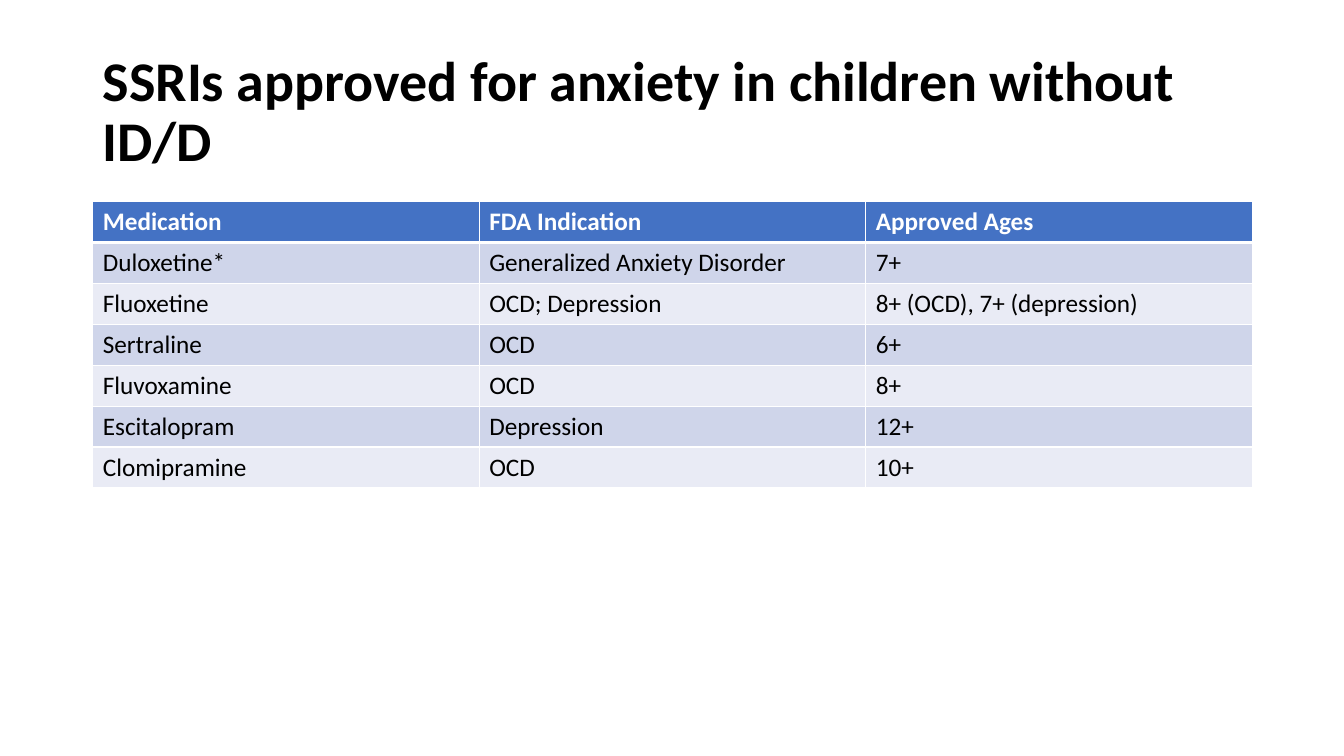
from lxml.etree import SubElement
from pptx import Presentation
from pptx.dml.color import RGBColor
from pptx.enum.text import MSO_ANCHOR
from pptx.oxml.ns import qn
from pptx.util import Inches, Pt

# Content
TITLE = "SSRIs approved for anxiety in children without ID/D"
HEADER = ("Medication", "FDA Indication", "Approved Ages")
MEDICATIONS = [
    ("Duloxetine*", "Generalized Anxiety Disorder", "7+"),
    ("Fluoxetine", "OCD; Depression", "8+ (OCD), 7+ (depression)"),
    ("Sertraline", "OCD", "6+"),
    ("Fluvoxamine", "OCD", "8+"),
    ("Escitalopram", "Depression", "12+"),
    ("Clomipramine", "OCD", "10+"),
]

# Style
FONT = "Calibri"
BLACK, WHITE, HEADER_BLUE = "000000", "FFFFFF", "4472C4"
BANDS = ("CFD5EA", "E9EBF5")
LEFT, WIDTH = 0.92, 11.5
TABLE_TOP, ROW_HEIGHT = 2, 0.406
THIN, THICK = 1, 3


def color(code):
    return RGBColor.from_string(code)


def add_run(paragraph, text, size, code, bold):
    run = paragraph.add_run()
    run.text = text
    run.font.name = FONT
    run.font.size = Pt(size)
    run.font.bold = bold
    run.font.color.rgb = color(code)


def add_borders(cell, top, bottom):
    properties = cell._tc.get_or_add_tcPr()
    for side, width in (("L", THIN), ("R", THIN), ("T", top), ("B", bottom)):
        line = SubElement(properties, qn(f"a:ln{side}"), w=str(Pt(width)))
        line_fill = SubElement(line, qn("a:solidFill"))
        SubElement(line_fill, qn("a:srgbClr"), val=WHITE)


presentation = Presentation()
presentation.slide_width = Inches(13.33)
presentation.slide_height = Inches(7.5)
slide = presentation.slides.add_slide(presentation.slide_layouts[6])

# Title
title = slide.shapes.add_textbox(
    Inches(LEFT), Inches(0.4), Inches(WIDTH), Inches(1.45)
).text_frame
title.word_wrap = True
title.vertical_anchor = MSO_ANCHOR.MIDDLE
title.paragraphs[0].line_spacing = 0.9
add_run(title.paragraphs[0], TITLE, 40, BLACK, True)

# Medication table
rows = [HEADER, *MEDICATIONS]
table = slide.shapes.add_table(
    len(rows), len(HEADER), Inches(LEFT), Inches(TABLE_TOP),
    Inches(WIDTH), Inches(ROW_HEIGHT * len(rows)),
).table
for r, row in enumerate(rows):
    is_header = r == 0
    fill = HEADER_BLUE if is_header else BANDS[(r - 1) % 2]
    for c, text in enumerate(row):
        cell = table.cell(r, c)
        add_borders(cell, THICK if r == 1 else THIN, THICK if is_header else THIN)
        cell.fill.solid()
        cell.fill.fore_color.rgb = color(fill)
        add_run(cell.text_frame.paragraphs[0], text, 18,
                WHITE if is_header else BLACK, is_header)

presentation.save("out.pptx")
